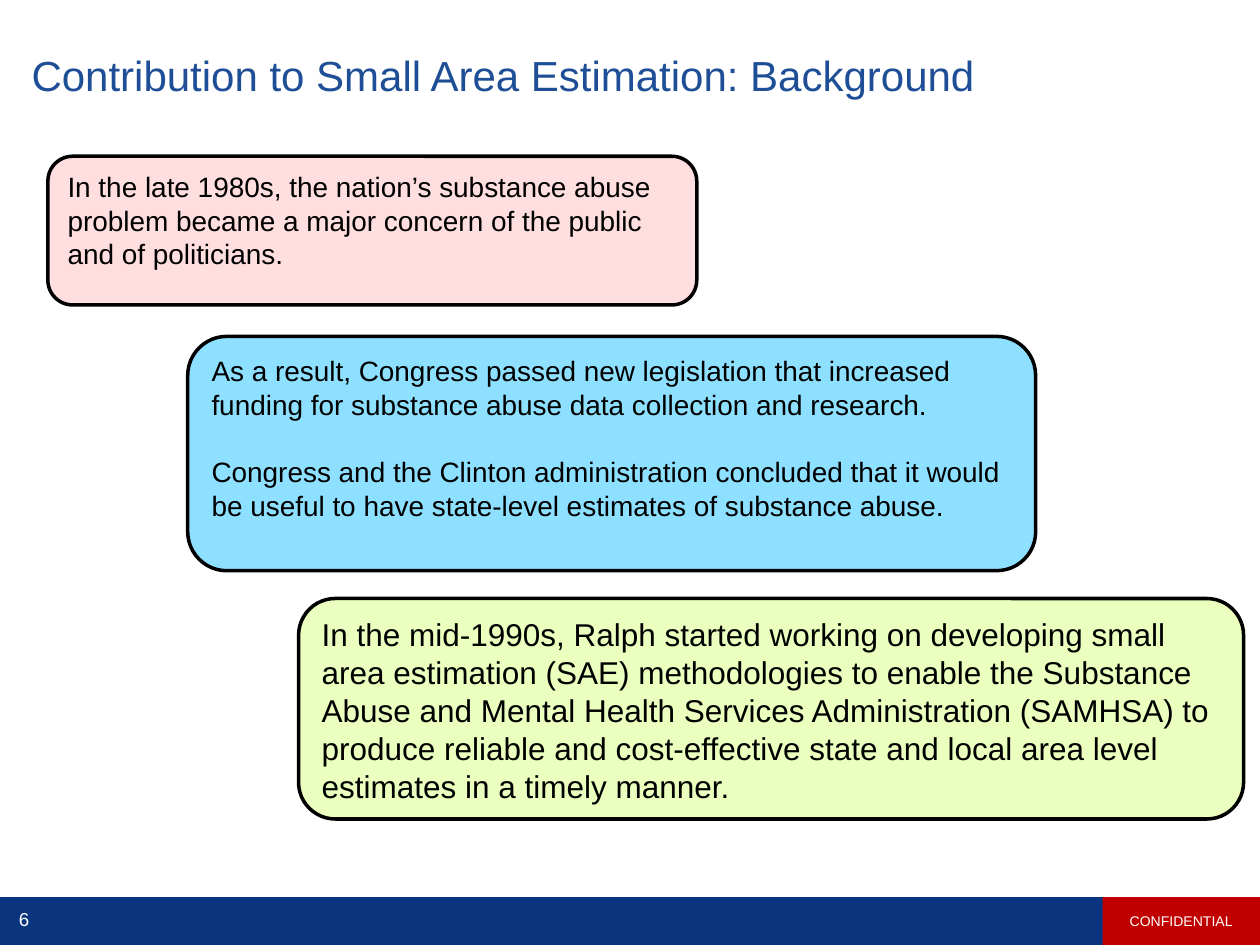
"""Build the small area estimation background slide."""
from pptx import Presentation
from pptx.dml.color import RGBColor
from pptx.enum.shapes import MSO_SHAPE as Shape
from pptx.enum.text import MSO_ANCHOR as Anchor, PP_ALIGN as Align
from pptx.util import Inches, Pt

FONT = "Arial"
CELL = 0.1
NAVY, RED, BLUE, WHITE, BLACK = "0A357E", "C00000", "1E4E96", "FFFFFF", "000000"
STEPS = [
    ((3.8, 12.4, 51.5, 11.8), "FFDEDF", 16, [
        "In the late 1980s, the nation’s substance abuse problem became a major "
        "concern of the public and of politicians."]),
    ((14.9, 26.7, 67.3, 18.6), "8DE0FF", 16, [
        "As a result, Congress passed new legislation that increased funding for "
        "substance abuse data collection and research.",
        "Congress and the Clinton administration concluded that it would be useful "
        "to have state-level estimates of substance abuse."]),
    ((23.7, 47.5, 75, 17.5), "EBFFBF", 18, [
        "In the mid-1990s, Ralph started working on developing small area estimation "
        "(SAE) methodologies to enable the Substance Abuse and Mental Health Services "
        "Administration (SAMHSA) to produce reliable and cost-effective state and "
        "local area level estimates in a timely manner."]),
]


def color(value):
    """Turn a hex string into a colour."""
    return RGBColor.from_string(value)


class SlideBuilder:
    """Hold the style and current slide; lengths are grid columns and rows."""

    def __init__(self, deck):
        self.slide = deck.slides.add_slide(deck.slide_layouts[5])
        fill = self.slide.background.fill
        fill.solid()
        fill.fore_color.rgb = color(WHITE)

    def place(self, cells):
        return [Inches(cell * CELL) for cell in cells]

    def add_text(self, box, texts, size, ink, align=Align.LEFT, anchor=Anchor.MIDDLE, gap=0):
        frame = box.text_frame
        frame.word_wrap = True
        frame.vertical_anchor = anchor
        for index, text in enumerate(texts):
            para = frame.paragraphs[0] if index == 0 else frame.add_paragraph()
            para.text = text
            para.alignment = align
            para.space_before = Pt(gap if index else 0)
            para.font.name, para.font.size = FONT, Pt(size)
            para.font.color.rgb = color(ink)
        return frame

    def title(self, cells, text):
        box = self.slide.shapes.title
        box.left, box.top, box.width, box.height = self.place(cells)
        frame = self.add_text(box, [text], 24, BLUE)
        frame.margin_left = frame.margin_top = frame.margin_bottom = Inches(0.1)
        frame.margin_right = Inches(0.2)
        frame.paragraphs[0].line_spacing = 0.9

    def block(self, cells, fill, kind=Shape.RECTANGLE, line=None):
        box = self.slide.shapes.add_shape(kind, *self.place(cells))
        box.shadow.inherit = False
        box.fill.solid()
        box.fill.fore_color.rgb = color(fill)
        if line:
            box.line.color.rgb = color(line)
            box.line.width = Pt(2)
        else:
            box.line.fill.background()
        return box

    def step(self, cells, fill, size, texts):
        box = self.block(cells, fill, Shape.ROUNDED_RECTANGLE, BLACK)
        self.add_text(box, texts, size, BLACK, anchor=Anchor.TOP, gap=size * 1.2)

    def footer(self, number, label):
        self.block((0, 71.2, 100, 3.8), NAVY)
        tag = self.block((87.5, 71.2, 12.5, 3.8), RED)
        self.add_text(tag, [label], 8, WHITE, Align.CENTER)
        box = self.slide.shapes.add_textbox(*self.place((0, 71.3, 3.8, 3.2)))
        self.add_text(box, [number], 10.7, WHITE, Align.CENTER)


def main():
    deck = Presentation()
    deck.slide_width, deck.slide_height = Inches(10), Inches(7.5)
    page = SlideBuilder(deck)
    page.title((1.5, 2, 96.7, 8.3), "Contribution to Small Area Estimation: Background")
    page.footer("6", "CONFIDENTIAL")
    for step in STEPS:
        page.step(*step)
    deck.save("out.pptx")


if __name__ == "__main__":
    main()
